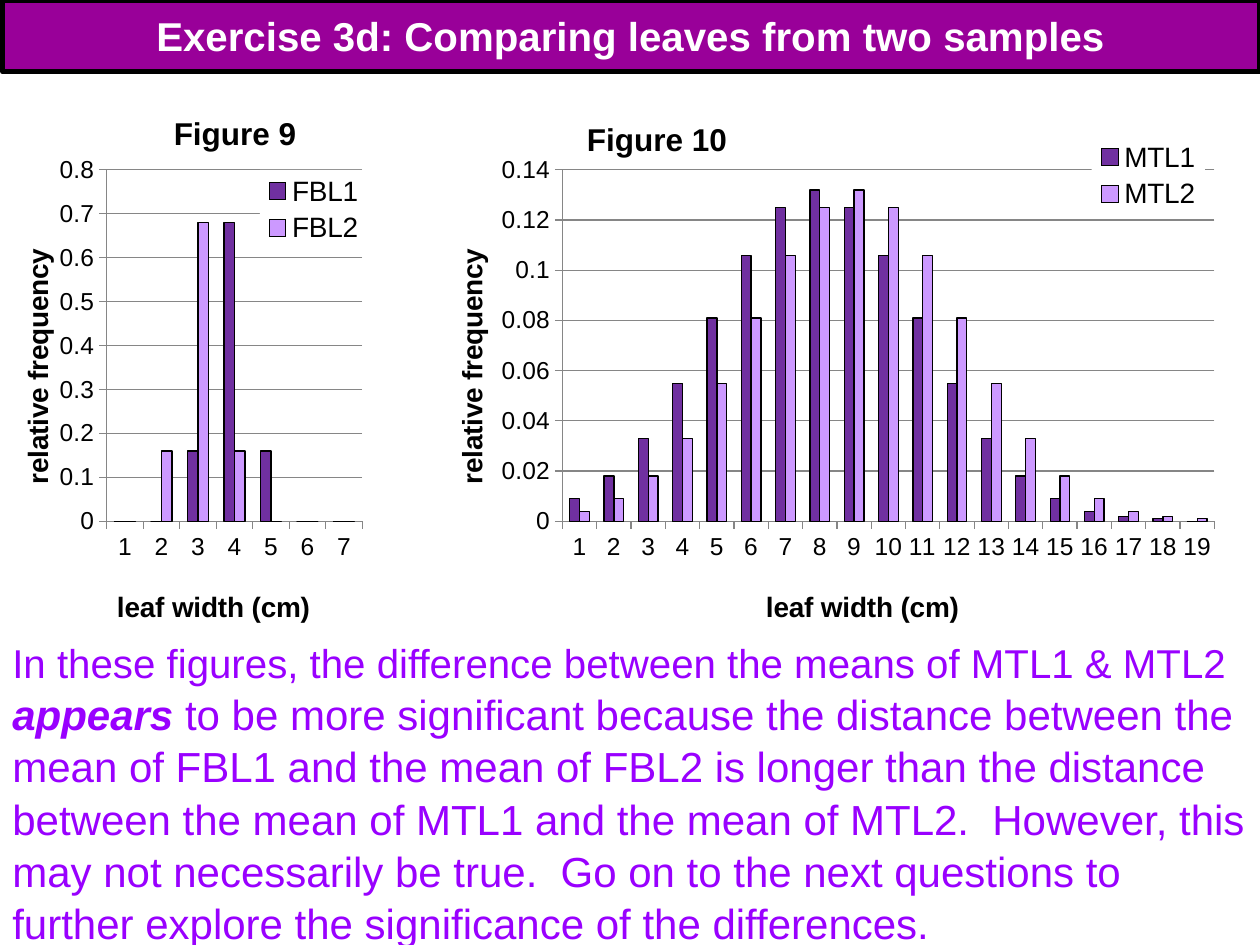
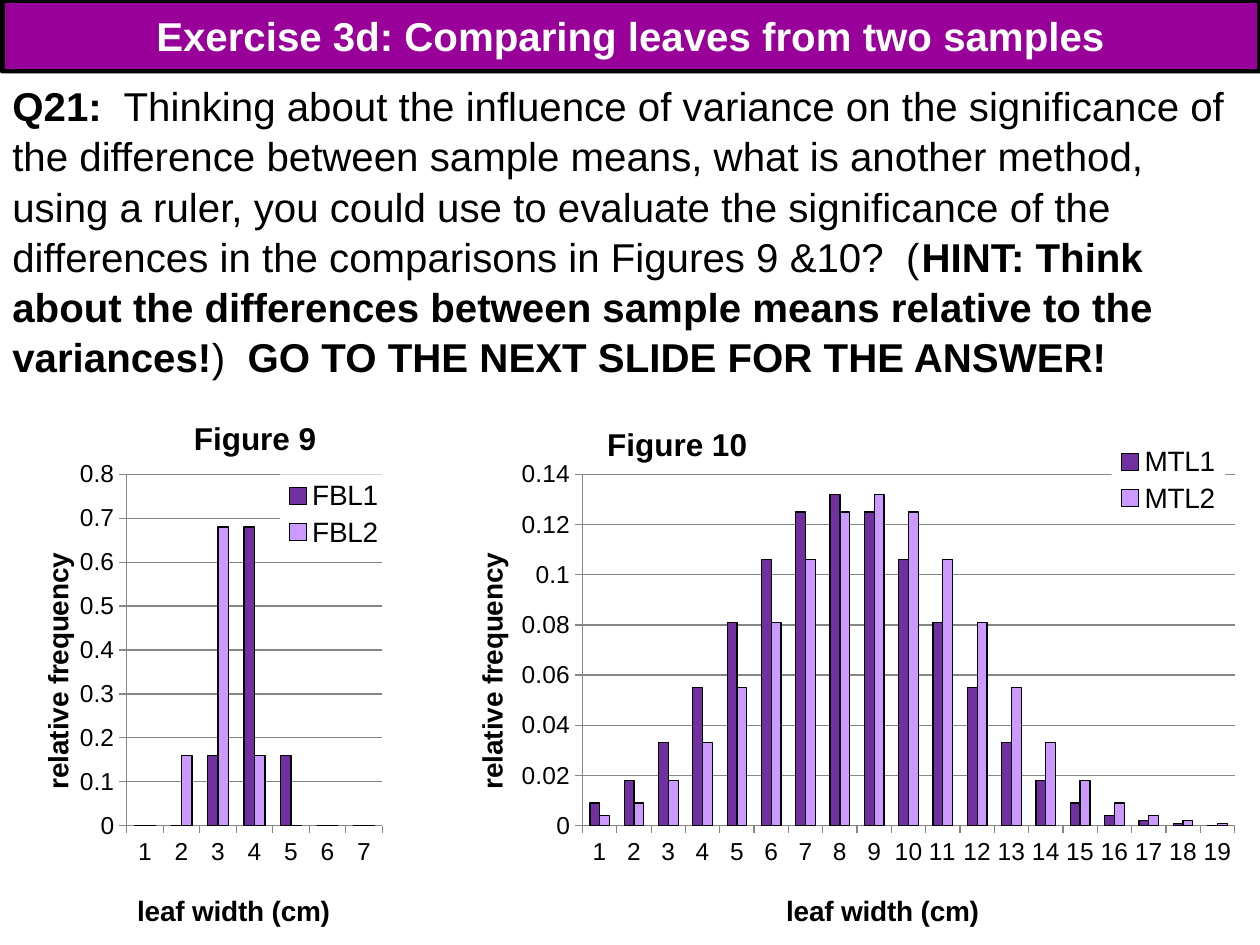
from dataclasses import dataclass

from lxml import etree
from pptx import Presentation
from pptx.chart.data import CategoryChartData
from pptx.dml.color import RGBColor
from pptx.enum import chart as charts, shapes, text
from pptx.oxml import ns
from pptx.util import Pt


@dataclass(frozen=True)
class Theme:
    font: str = "Arial"
    band: str = "990099"
    white: str = "FFFFFF"
    black: str = "000000"
    comment: str = "9900FF"
    grid: str = "868686"
    series: tuple = ("7030A0", "CC99FF")
    body_size: int = 23
    large_size: int = 24
    figure_size: int = 18
    axis_size: int = 16
    tick_size: int = 14
    chart_size: int = 10
    line_spacing: float = 1.04


@dataclass(frozen=True)
class Figure:
    """One bar chart; the places are fractions of the chart's own area."""
    title: str
    left: float
    width: float
    samples: dict
    top_value: float
    step: float
    plot_place: tuple
    title_place: tuple
    legend_place: tuple
    width_label_place: tuple
    frequency_label_place: tuple


# In each figure the second sample is the first one moved by one centimetre.
FBL1 = [0, 0, 0.16, 0.68, 0.16, 0, 0]
MTL1 = [0.009, 0.018, 0.033, 0.055, 0.081, 0.106, 0.125, 0.132, 0.125, 0.106,
        0.081, 0.055, 0.033, 0.018, 0.009, 0.004, 0.002, 0.001, 0]

FIGURES = [
    Figure("Figure 9", -12, 292, {"FBL1": FBL1, "FBL2": FBL1[1:] + [0]}, 0.8, 0.1,
           plot_place=(0.25, 0.17, 0.5, 0.62),
           title_place=(0.37, 0.06),
           legend_place=(0.55, 0.17, 0.21, 0.14),
           width_label_place=(0.26, 0.9),
           frequency_label_place=(0.07, 0.3)),
    Figure("Figure 10", 235, 540, {"MTL1": MTL1, "MTL2": [0.004] + MTL1[:-1]}, 0.14, 0.02,
           plot_place=(0.16, 0.17, 0.69, 0.62),
           title_place=(0.18, 0.07),
           legend_place=(0.72, 0.11, 0.12, 0.14),
           width_label_place=(0.37, 0.9),
           frequency_label_place=(0.04, 0.3)),
]


def apply(target, **values):
    for name, value in values.items():
        setattr(target, name, value)


def place(element, x, y, *size):
    """Fix the position, and the size if given, of a part of a chart."""
    for old in element.findall(ns.qn("c:layout")):
        element.remove(old)
    layout = etree.Element(ns.qn("c:layout"))
    manual = etree.SubElement(layout, ns.qn("c:manualLayout"))
    entries = [("xMode", "edge"), ("yMode", "edge"), ("x", x), ("y", y)]
    if element.tag == ns.qn("c:plotArea"):
        entries.insert(0, ("layoutTarget", "inner"))
    entries += zip("wh", size)
    for name, value in entries:
        etree.SubElement(manual, ns.qn(f"c:{name}")).set("val", str(value))
    before = element.find(ns.qn("c:tx"))
    if before is None:
        before = element.find(ns.qn("c:legendPos"))
    if before is None:
        element.insert(0, layout)
    else:
        before.addnext(layout)


class Deck:
    def __init__(self, theme):
        self.theme = theme
        self.presentation = Presentation()
        apply(self.presentation, slide_width=Pt(720), slide_height=Pt(540))
        self.slide = None

    def add_slide(self, heading):
        self.slide = self.presentation.slides.add_slide(self.presentation.slide_layouts[6])
        theme = self.theme
        band = self.panel(1.5, 0, 718.5, 41, theme.band)
        band.line.color.rgb = RGBColor.from_string(theme.black)
        band.line.width = Pt(3)
        band.text_frame.vertical_anchor = text.MSO_ANCHOR.MIDDLE
        self.add_runs(band, [(heading, dict(bold=True))], theme.white, text.PP_ALIGN.CENTER)

    def panel(self, left, top, width, height, fill):
        panel = self.slide.shapes.add_shape(
            shapes.MSO_SHAPE.RECTANGLE, Pt(left), Pt(top), Pt(width), Pt(height))
        panel.shadow.inherit = False
        panel.fill.solid()
        panel.fill.fore_color.rgb = RGBColor.from_string(fill)
        panel.line.fill.background()
        panel.text_frame.word_wrap = True
        return panel

    def body(self, top, runs, color):
        panel = self.panel(0, top, 720, 540 - top, self.theme.white)
        panel.text_frame.vertical_anchor = text.MSO_ANCHOR.TOP
        self.add_runs(panel, runs, color, text.PP_ALIGN.LEFT)
        panel.text_frame.paragraphs[0].line_spacing = self.theme.line_spacing

    def add_runs(self, panel, runs, color, alignment):
        paragraph = panel.text_frame.paragraphs[0]
        paragraph.alignment = alignment
        for words, style in runs:
            run = paragraph.add_run()
            run.text = words
            self.style(run.font, color, **{"size": self.theme.body_size, **style})

    def style(self, font, color, size, **values):
        apply(font, name=self.theme.font, size=Pt(size), **values)
        font.color.rgb = RGBColor.from_string(color)

    def chart_label(self, title, words, size, position):
        title.text_frame.text = words
        font = title.text_frame.paragraphs[0].runs[0].font
        self.style(font, self.theme.black, size, bold=True)
        place(title._element, *position)

    def axis(self, axis, words, position):
        theme = self.theme
        apply(axis, has_title=True, major_tick_mark=charts.XL_TICK_MARK.OUTSIDE,
              minor_tick_mark=charts.XL_TICK_MARK.NONE)
        self.style(axis.tick_labels.font, theme.black, theme.tick_size)
        self.hairline(axis.format.line, theme.grid)
        self.chart_label(axis.axis_title, words, theme.axis_size, position)

    def hairline(self, line, color):
        line.color.rgb = RGBColor.from_string(color)
        line.width = Pt(0.75)

    def legend(self, chart, position):
        """Add a legend on a white backing that hides the grid lines."""
        chart.has_legend = True
        legend = chart.legend
        apply(legend, position=charts.XL_LEGEND_POSITION.RIGHT, include_in_layout=False)
        self.style(legend.font, self.theme.black, self.theme.axis_size)
        place(legend._element, *position)
        backing = etree.Element(ns.qn("c:spPr"))
        fill = etree.SubElement(backing, ns.qn("a:solidFill"))
        etree.SubElement(fill, ns.qn("a:srgbClr")).set("val", self.theme.white)
        legend._element.find(ns.qn("c:overlay")).addnext(backing)

    def figure(self, figure, top, shift):
        theme = self.theme
        data = CategoryChartData()
        count = len(next(iter(figure.samples.values())))
        data.categories = [str(leaf_width) for leaf_width in range(1, count + 1)]
        for sample, frequencies in figure.samples.items():
            data.add_series(sample, frequencies)
        chart = self.slide.shapes.add_chart(
            charts.XL_CHART_TYPE.COLUMN_CLUSTERED, Pt(figure.left + shift), Pt(top),
            Pt(figure.width), Pt(324), data).chart
        self.style(chart.font, theme.black, theme.chart_size)

        chart.has_title = True
        self.chart_label(chart.chart_title, figure.title, theme.figure_size, figure.title_place)
        chart.chart_title._element.find(ns.qn("c:overlay")).set("val", "1")

        self.axis(chart.category_axis, "leaf width (cm)", figure.width_label_place)
        frequency = chart.value_axis
        self.axis(frequency, "relative frequency", figure.frequency_label_place)
        frequency.axis_title._element.find(f".//{ns.qn('a:bodyPr')}").set("rot", "-5400000")
        apply(frequency, minimum_scale=0, maximum_scale=figure.top_value,
              major_unit=figure.step, has_major_gridlines=True)
        self.hairline(frequency.major_gridlines.format.line, theme.grid)

        plot = chart.plots[0]
        apply(plot, gap_width=150, overlap=0, vary_by_categories=False)
        for bars, color in zip(plot.series, theme.series):
            bars.invert_if_negative = False
            bars.format.fill.solid()
            bars.format.fill.fore_color.rgb = RGBColor.from_string(color)
            self.hairline(bars.format.line, theme.black)
        place(chart._chartSpace.find(f".//{ns.qn('c:plotArea')}"), *figure.plot_place)
        self.legend(chart, figure.legend_place)


def main():
    theme = Theme()
    deck = Deck(theme)
    heading = "Exercise 3d: Comparing leaves from two samples"
    large, bold = dict(size=theme.large_size), dict(bold=True)

    deck.add_slide(heading)
    deck.body(360, [
        ("In these figures, the difference between the means of MTL1 & MTL2 ", {}),
        ("appears", dict(bold=True, italic=True, **large)),
        (" to be more significant because the distance between the mean of FBL1 and "
         "the mean of FBL2 is longer than the distance between the mean of MTL1 and "
         "the mean of MTL2.  However, this may not necessarily be true.  Go on to the "
         "next questions to further explore the significance of the differences.", large),
    ], theme.comment)
    for figure in FIGURES:
        deck.figure(figure, top=42, shift=0)

    deck.add_slide(heading)
    deck.body(42, [
        ("Q21:", bold),
        ("  Thinking about the influence of variance on the significance of the "
         "difference between sample means, what is another method, using a ruler, you "
         "could use to evaluate the significance of the differences in the comparisons "
         "in Figures 9 &10?  (", {}),
        ("HINT: Think about the differences between sample means relative to the "
         "variances!", bold),
        (")  ", {}),
        ("GO TO THE NEXT SLIDE FOR THE ANSWER!", bold),
    ], theme.black)
    for figure in FIGURES:
        deck.figure(figure, top=216, shift=11.5)

    deck.presentation.save("out.pptx")


if __name__ == "__main__":
    main()
